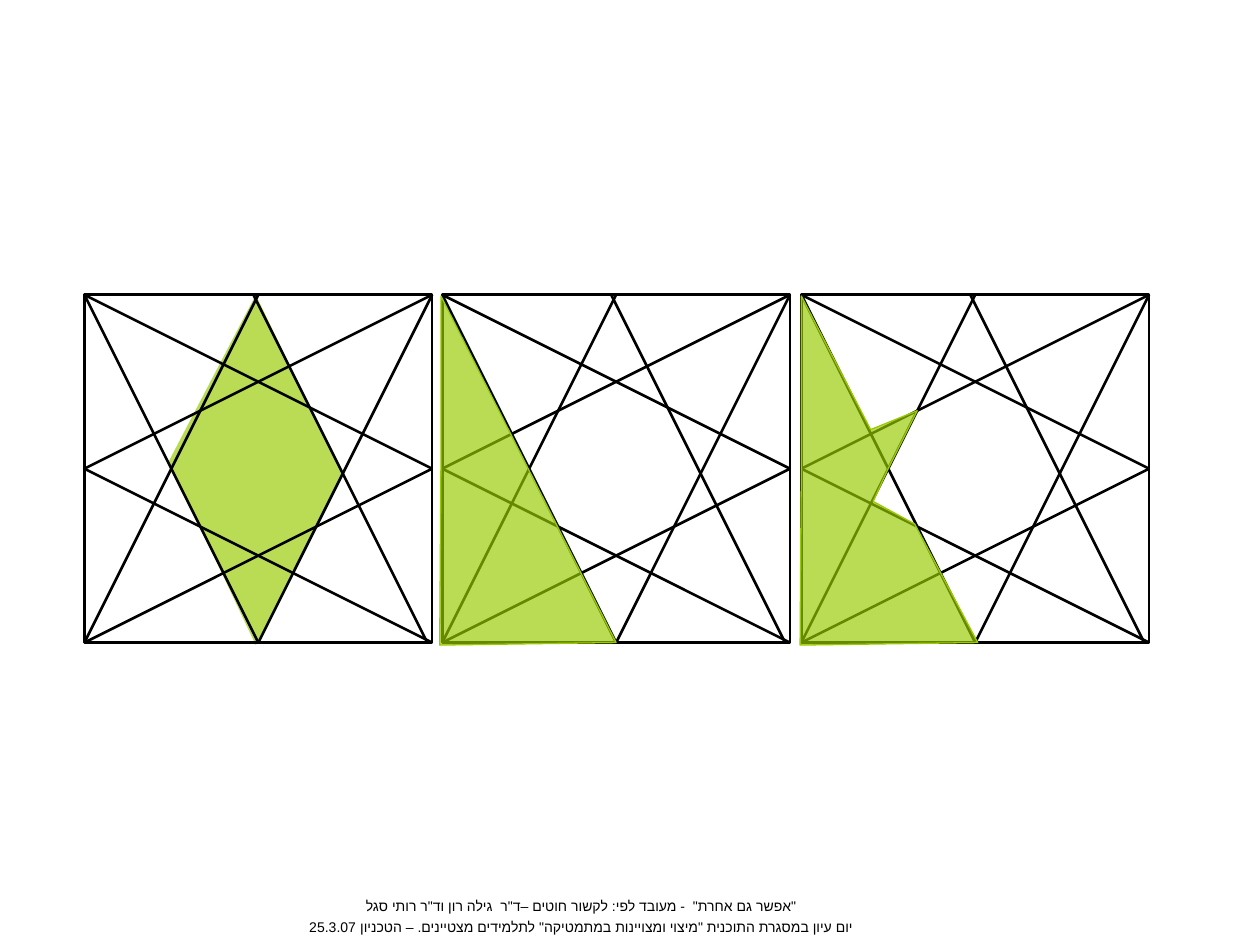
import pptx
import pptx.util
import pptx.dml.color
import pptx.enum.shapes
import pptx.enum.text
import pptx.oxml.ns
from lxml import etree

Inches, Pt = pptx.util.Inches, pptx.util.Pt
qn = pptx.oxml.ns.qn

SIDE = 2.76
TOP = 2.34
BLACK, GREEN = "000000", "99CC00"

# Connection sites of a rectangle, by position within a unit square
SITES = {(0.5, 0): 0, (0, 0.5): 1, (0.5, 1): 2, (1, 0.5): 3}
# Strings of the star, as end points in a unit square
STRINGS = [
    ((0, 0), (1, 0.5)), ((0, 0.5), (1, 0)),
    ((0, 1), (1, 0.5)), ((0, 0.5), (1, 1)),
    ((0.5, 1), (1, 0)), ((0, 0), (0.5, 1)),
    ((0.5, 0), (0, 1)), ((0.486, 0), (0.986, 1)),
]

RHOMBUS = [(2.03, 5.12), (1.34, 3.66), (2.03, 2.34), (2.72, 3.77)]
TRIANGLE = [(3.49, 5.12), (3.5, 3.67), (3.5, 2.35), (4.89, 5.1)]
NOTCHED = [(6.35, 5.12), (6.36, 3.67), (6.36, 2.35), (6.91, 3.41), (7.28, 3.26),
           (7.04, 3.74), (6.93, 3.98), (7.26, 4.16), (7.76, 5.1)]

SOURCE = [
    "\"אפשר גם אחרת\"  - מעובד לפי: לקשור חוטים –ד\"ר  גילה רון וד\"ר רותי סגל",
    "יום עיון במסגרת התוכנית \"מיצוי ומצויינות במתמטיקה\" לתלמידים מצטיינים. – הטכניון 25.3.07",
]


def rgb(color):
    return pptx.dml.color.RGBColor.from_string(color)


def set_line(sp, color, width):
    sp.line.color.rgb = rgb(color)
    sp.line.width = Pt(width)


def add_string(group, square, left, start, end):
    """Draw one string, joined to the square where it meets a side's middle."""
    ends = [Inches(v) for x, y in (start, end)
            for v in (left + x * SIDE, TOP + y * SIDE)]
    line = group.shapes.add_connector(
        pptx.enum.shapes.MSO_CONNECTOR.STRAIGHT, *ends)
    set_line(line, BLACK, 1.5)
    etree.SubElement(line._element.spPr, qn("a:effectLst"))
    if start in SITES:
        line.begin_connect(square, SITES[start])
    if end in SITES:
        line.end_connect(square, SITES[end])


def add_star_square(slide, left):
    group = slide.shapes.add_group_shape()
    square = group.shapes.add_shape(
        pptx.enum.shapes.MSO_SHAPE.RECTANGLE,
        Inches(left), Inches(TOP), Inches(SIDE), Inches(SIDE))
    square.shadow.inherit = False
    square.fill.background()
    set_line(square, BLACK, 1.5)
    for start, end in STRINGS:
        add_string(group, square, left, start, end)


def add_region(slide, points, outlined=True):
    """Shade a region with translucent green."""
    corners = [(Inches(x), Inches(y)) for x, y in points]
    builder = slide.shapes.build_freeform(*corners[0], scale=1.0)
    builder.add_line_segments(corners[1:], close=True)
    sp = builder.convert_to_shape()
    sp.shadow.inherit = False
    sp.fill.solid()
    sp.fill.fore_color.rgb = rgb(GREEN)
    color = sp._element.spPr.find(qn("a:solidFill"))[0]
    etree.SubElement(color, qn("a:alpha"), val="67000")
    if outlined:
        set_line(sp, GREEN, 0.75)
    else:
        sp.line.fill.background()


def add_text(slide, lines, left, top, width, height, size=8, font="Arial",
             color=BLACK, gap=2.4):
    """Add centred right-to-left paragraphs."""
    box = slide.shapes.add_textbox(
        Inches(left), Inches(top), Inches(width), Inches(height))
    tf = box.text_frame
    tf.word_wrap = True
    tf.auto_size = pptx.enum.text.MSO_AUTO_SIZE.SHAPE_TO_FIT_TEXT
    for i, text in enumerate(lines):
        p = tf.add_paragraph() if i else tf.paragraphs[0]
        p.alignment = pptx.enum.text.PP_ALIGN.CENTER
        p._p.get_or_add_pPr().set("rtl", "1")
        if i:
            p.space_before = Pt(gap)
        r = p.add_run()
        r.text = text
        r.font.size = Pt(size)
        r.font.name = font
        r.font.color.rgb = rgb(color)
        etree.SubElement(r._r.get_or_add_rPr(), qn("a:cs"), typeface=font)


def main():
    prs = pptx.Presentation()
    prs.slide_width, prs.slide_height = Inches(10), Inches(7.5)
    slide = prs.slides.add_slide(prs.slide_layouts[6])

    # Star squares and shaded regions, from back to front
    add_star_square(slide, 3.51)
    add_region(slide, RHOMBUS, outlined=False)
    add_star_square(slide, 0.67)
    add_region(slide, TRIANGLE)
    add_star_square(slide, 6.36)
    add_region(slide, NOTCHED)

    # Source note
    add_text(slide, SOURCE, 0.94, 7.07, 7.35, 0.41)
    prs.save("out.pptx")


if __name__ == "__main__":
    main()
